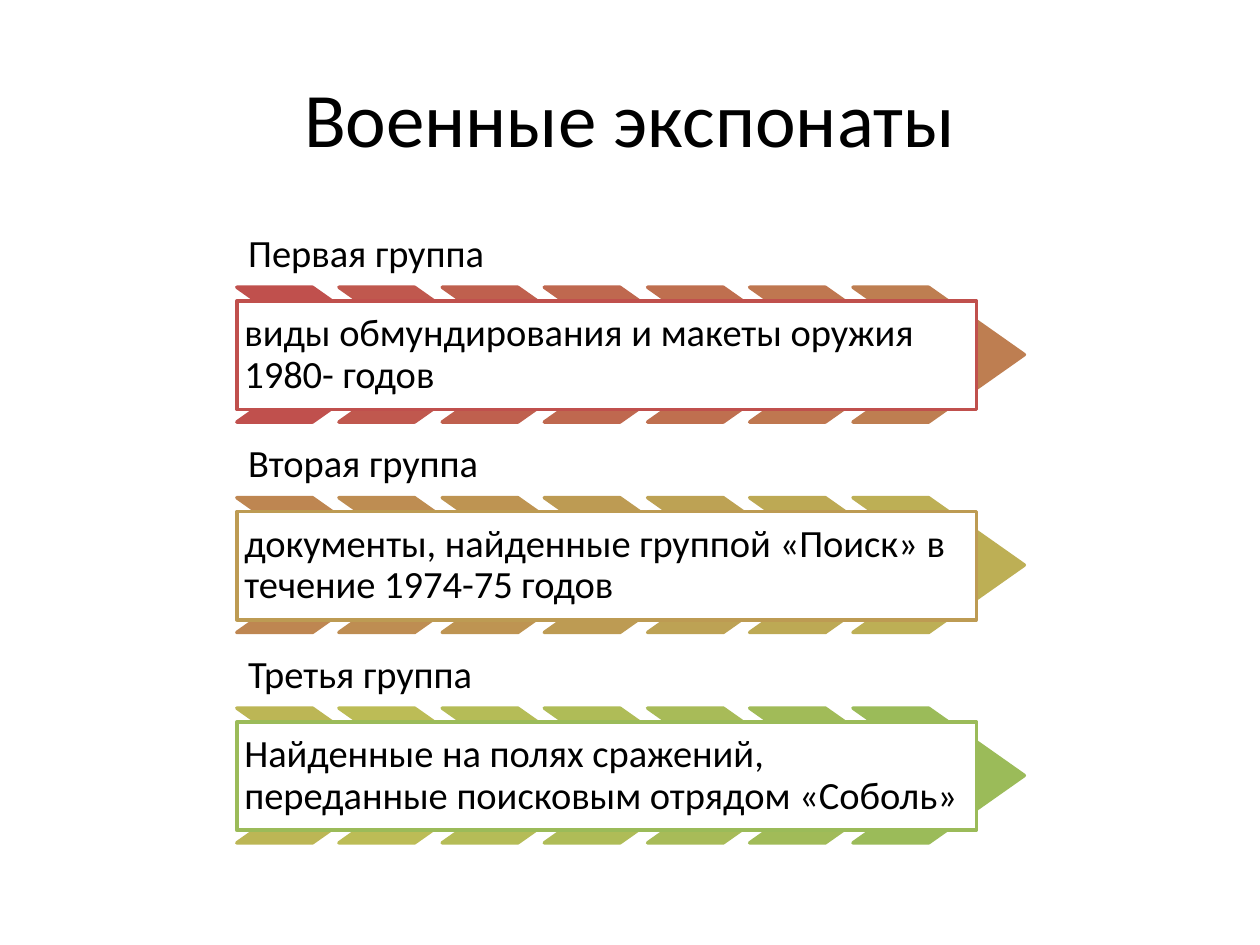
import dataclasses

import pptx
import pptx.dml.color
import pptx.enum.shapes
import pptx.enum.text
import pptx.shapes.base
import pptx.util

EMU_PER_PX = 9144  # 100 px to the inch
FONT = "Calibri"
BLACK = "000000"
WHITE = "FFFFFF"

LEFT = 188
FIRST_TOP = 175
ROW_PITCH = 167
CHEVRON_PITCH = 81.5
LINE_WIDTH = 2


@dataclasses.dataclass(frozen=True)
class ExhibitGroup:
    label: str
    description: str
    border: str
    chevrons: tuple[str, ...]


EXHIBIT_GROUPS = (
    ExhibitGroup(
        "Первая группа",
        "виды обмундирования и макеты оружия 1980- годов",
        "C0504D",
        ("C0504D", "C0584E", "BF604E", "BF684F", "BF6F4F", "BF7750", "BE7E51"),
    ),
    ExhibitGroup(
        "Вторая группа",
        "документы, найденные группой «Поиск» в течение 1974-75 годов",
        "BD9B53",
        ("BE8651", "BE8D52", "BE9452", "BD9B53", "BDA254", "BDA954", "BDAF55"),
    ),
    ExhibitGroup(
        "Третья группа",
        "Найденные на полях сражений, переданные поисковым отрядом «Соболь»",
        "9BBB59",
        ("BCB655", "BCBC56", "B5BC57", "AFBC57", "A8BB58", "A1BB58", "9BBB59"),
    ),
)


def px(length: int) -> pptx.util.Emu:
    return pptx.util.Emu(length * EMU_PER_PX)


def color(value: str) -> pptx.dml.color.RGBColor:
    return pptx.dml.color.RGBColor.from_string(value)


def write_text(
    shape: pptx.shapes.base.BaseShape,
    text: str,
    size: int,
    anchor: pptx.enum.text.MSO_ANCHOR,
    align: pptx.enum.text.PP_ALIGN = pptx.enum.text.PP_ALIGN.LEFT,
    inset: int = 9,
    line_spacing: float = 0.9,
) -> None:
    frame = shape.text_frame
    frame.word_wrap = True
    frame.vertical_anchor = anchor
    frame.margin_left = frame.margin_right = px(inset)
    frame.margin_top = frame.margin_bottom = px(inset)
    paragraph = frame.paragraphs[0]
    paragraph.text = text
    paragraph.alignment = align
    paragraph.line_spacing = line_spacing
    paragraph.font.name = FONT
    paragraph.font.size = pptx.util.Pt(size)
    paragraph.font.color.rgb = color(BLACK)


def add_filled_shape(
    shapes,
    kind: pptx.enum.shapes.MSO_SHAPE,
    box: tuple[int, int, int, int],
    fill: str,
    line: str,
) -> pptx.shapes.base.BaseShape:
    shape = shapes.add_shape(kind, *map(px, box))
    shape.shadow.inherit = False
    shape.fill.solid()
    shape.fill.fore_color.rgb = color(fill)
    shape.line.color.rgb = color(line)
    shape.line.width = pptx.util.Pt(LINE_WIDTH)
    return shape


def add_exhibit_group(shapes, group: ExhibitGroup, top: int) -> None:
    """Draw the label, the chevron arrow and the description laid over it."""
    label = shapes.add_textbox(px(LEFT), px(top), px(580), px(53))
    write_text(label, group.label, 22, pptx.enum.text.MSO_ANCHOR.BOTTOM)

    for index, shade in enumerate(group.chevrons):
        left = LEFT + int(index * CHEVRON_PITCH)
        chevron = add_filled_shape(
            shapes,
            pptx.enum.shapes.MSO_SHAPE.CHEVRON,
            (left, top + 53, 136, 107),
            shade,
            shade,
        )
        chevron.adjustments[0] = 0.71

    description = add_filled_shape(
        shapes,
        pptx.enum.shapes.MSO_SHAPE.RECTANGLE,
        (LEFT, top + 64, 587, 86),
        WHITE,
        group.border,
    )
    write_text(
        description, group.description, 22, pptx.enum.text.MSO_ANCHOR.MIDDLE, inset=6
    )


def main() -> None:
    presentation = pptx.Presentation()
    presentation.slide_width = px(1000)
    presentation.slide_height = px(750)
    slide = presentation.slides.add_slide(presentation.slide_layouts[6])

    title = slide.shapes.add_textbox(px(50), px(30), px(900), px(125))
    write_text(
        title,
        "Военные экспонаты",
        44,
        pptx.enum.text.MSO_ANCHOR.MIDDLE,
        align=pptx.enum.text.PP_ALIGN.CENTER,
        line_spacing=1.0,
    )

    diagram = slide.shapes.add_group_shape()
    for row, group in enumerate(EXHIBIT_GROUPS):
        add_exhibit_group(diagram.shapes, group, FIRST_TOP + row * ROW_PITCH)

    presentation.save("out.pptx")


if __name__ == "__main__":
    main()
